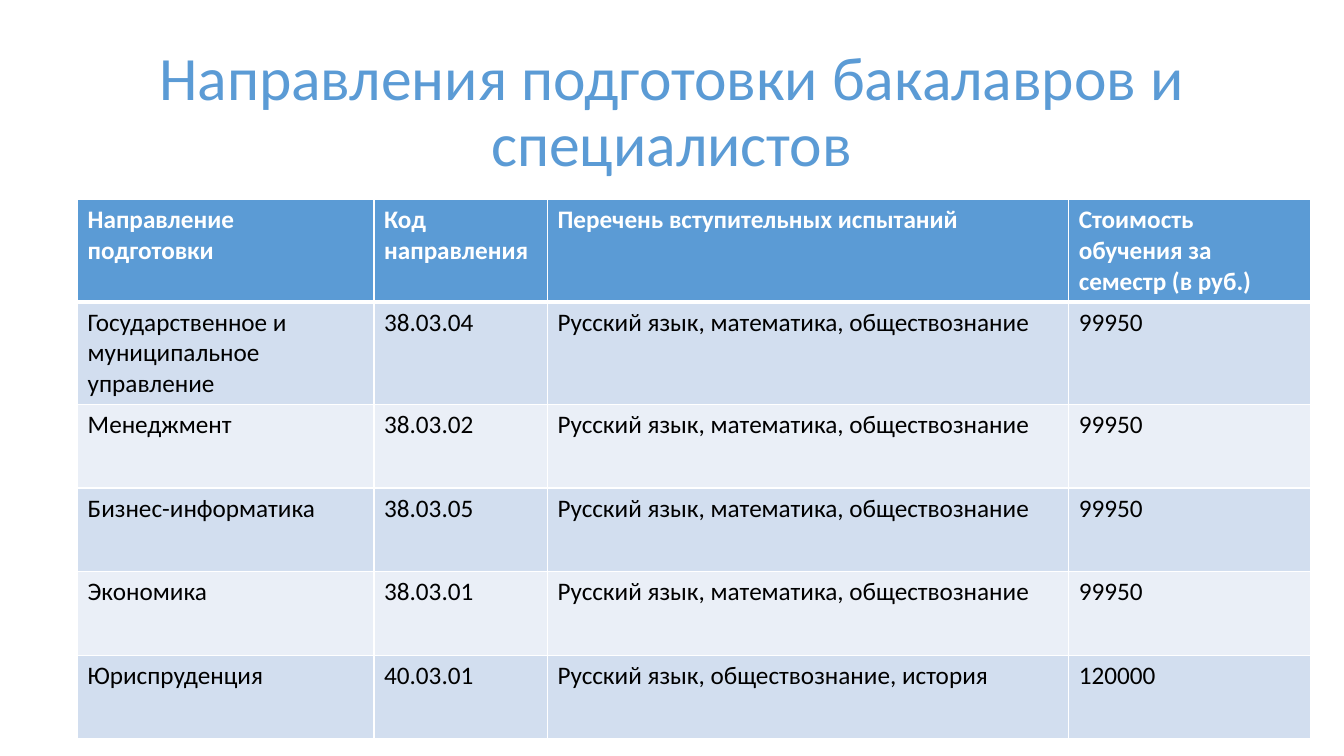
from lxml import etree
from pptx import Presentation
from pptx.dml.color import RGBColor
from pptx.enum.text import MSO_ANCHOR, MSO_AUTO_SIZE, PP_ALIGN
from pptx.oxml.ns import qn
from pptx.util import Inches, Pt

CENTER, MIDDLE, NO_FIT = PP_ALIGN.CENTER, MSO_ANCHOR.MIDDLE, MSO_AUTO_SIZE.NONE

TITLE = "Направления подготовки бакалавров и специалистов"
HEADER = ("Направление подготовки", "Код направления",
          "Перечень вступительных испытаний",
          "Стоимость обучения за семестр (в руб.)")
MATH_EXAMS = "Русский язык, математика, обществознание"
LAW_EXAMS = "Русский язык, обществознание, история"
PROGRAMS = [
    ("Государственное и муниципальное управление", "38.03.04", MATH_EXAMS, "99950"),
    ("Менеджмент", "38.03.02", MATH_EXAMS, "99950"),
    ("Бизнес-информатика", "38.03.05", MATH_EXAMS, "99950"),
    ("Экономика", "38.03.01", MATH_EXAMS, "99950"),
    ("Юриспруденция", "40.03.01", LAW_EXAMS, "120000"),
]

THEME = {
    "font": "Calibri", "title_size": 44, "cell_size": 18,
    "accent": "5B9BD5", "bands": ("D2DEEF", "EAEFF7"),
    "white": "FFFFFF", "black": "000000",
    "thin": 1, "thick": 3,
}
SLIDE_W, SLIDE_H = 13.33, 7.5
TITLE_BOX = (1, 0.68, 11.33, 0.89)
TABLE_LEFT, TABLE_TOP = 0.77, 1.98
COLS = (2.94, 1.72, 5.17, 2.4)
ROW_H = 0.83


def style_run(r, size, color, bold=False):
    r.font.name = THEME["font"]
    r.font.size = Pt(size)
    r.font.bold = bold
    r.font.color.rgb = RGBColor.from_string(color)


def add_borders(cell, top, bottom):
    tc_pr = cell._tc.get_or_add_tcPr()
    widths = {"L": THEME["thin"], "R": THEME["thin"], "T": top, "B": bottom}
    for side, width in widths.items():
        ln = etree.SubElement(tc_pr, qn(f"a:ln{side}"), w=str(Pt(width)))
        fill = etree.SubElement(ln, qn("a:solidFill"))
        etree.SubElement(fill, qn("a:srgbClr"), val=THEME["white"])


def add_title(slide):
    sp = slide.shapes.title
    sp.left, sp.top, sp.width, sp.height = map(Inches, TITLE_BOX)
    tf = sp.text_frame
    tf.text = TITLE
    tf.word_wrap = True
    tf.auto_size = NO_FIT
    tf.vertical_anchor = MIDDLE
    p = tf.paragraphs[0]
    p.alignment = CENTER
    p.line_spacing = 0.9
    style_run(p.runs[0], THEME["title_size"], THEME["accent"])


def add_program_table(slide):
    rows = [HEADER, *PROGRAMS]
    table = slide.shapes.add_table(
        len(rows), len(COLS), Inches(TABLE_LEFT), Inches(TABLE_TOP),
        Inches(sum(COLS)), Inches(ROW_H * len(rows))).table
    for column, width in zip(table.columns, COLS):
        column.width = Inches(width)
    for i, row in enumerate(rows):
        is_header = i == 0
        fill = THEME["accent"] if is_header else THEME["bands"][(i - 1) % 2]
        color = THEME["white"] if is_header else THEME["black"]
        top = THEME["thick"] if i == 1 else THEME["thin"]
        bottom = THEME["thick"] if is_header else THEME["thin"]
        for j, text in enumerate(row):
            cell = table.cell(i, j)
            cell.text = text
            add_borders(cell, top, bottom)
            cell.fill.solid()
            cell.fill.fore_color.rgb = RGBColor.from_string(fill)
            style_run(cell.text_frame.paragraphs[0].runs[0],
                      THEME["cell_size"], color, is_header)


def main():
    prs = Presentation()
    prs.slide_width, prs.slide_height = Inches(SLIDE_W), Inches(SLIDE_H)
    slide = prs.slides.add_slide(prs.slide_layouts[5])
    add_title(slide)
    add_program_table(slide)
    prs.save("out.pptx")


if __name__ == "__main__":
    main()
